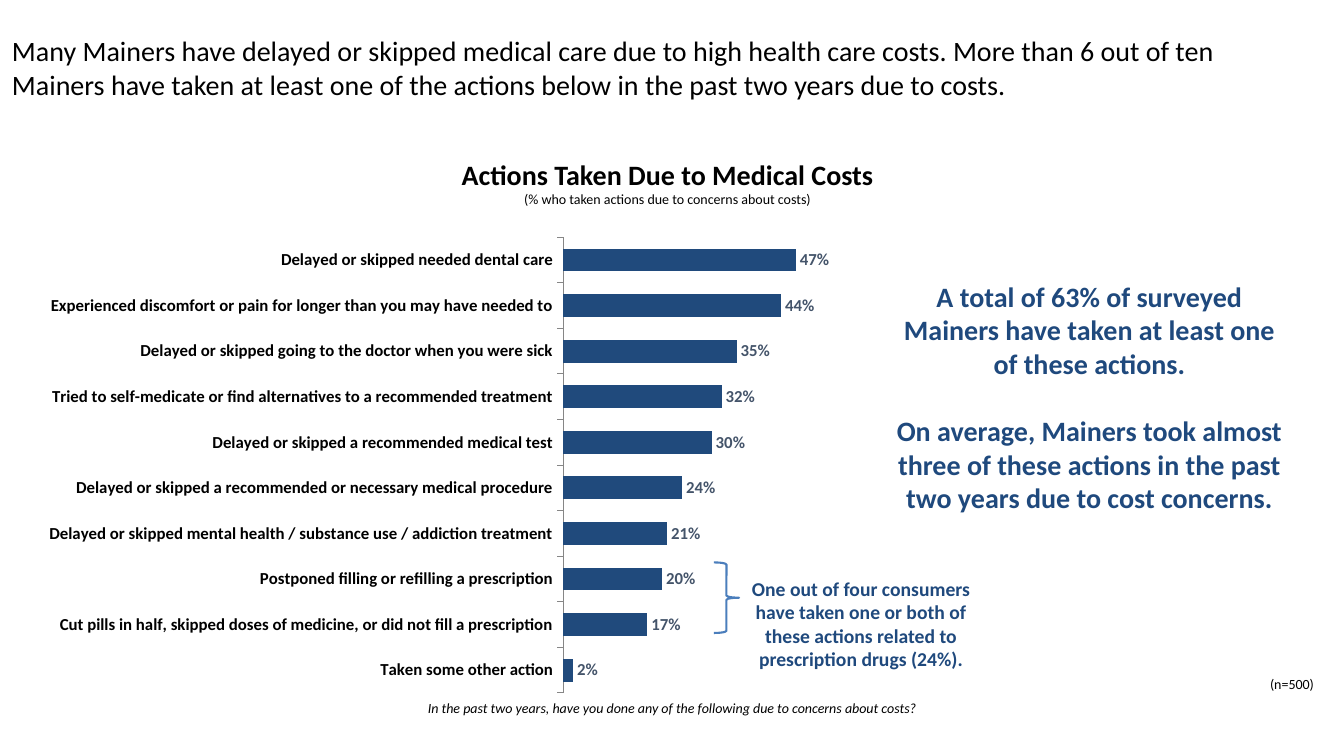
from lxml import etree
from pptx import Presentation
from pptx import util as u
from pptx.chart import data as chart_data
from pptx.dml.color import RGBColor
from pptx.enum import chart as charts, shapes, text
from pptx.oxml import ns

ACTIONS = {
    "Delayed or skipped needed dental care": 0.47,
    "Experienced discomfort or pain for longer than you may have needed to": 0.44,
    "Delayed or skipped going to the doctor when you were sick": 0.35,
    "Tried to self-medicate or find alternatives to a recommended treatment": 0.32,
    "Delayed or skipped a recommended medical test": 0.30,
    "Delayed or skipped a recommended or necessary medical procedure": 0.24,
    "Delayed or skipped mental health / substance use / addiction treatment": 0.21,
    "Postponed filling or refilling a prescription": 0.20,
    "Cut pills in half, skipped doses of medicine, or did not fill a prescription": 0.17,
    "Taken some other action": 0.02,
}
BLACK, NAVY, BAR, SLATE, BLUE, GRAY = "000000", "1F497D", "204A7C", "44546A", "4B7EBC", "868686"
PX = 9144


def color(value):
    return RGBColor.from_string(value)


def style_font(font, size=10, ink=BLACK, bold=False, italic=False):
    font.name, font.size = "Calibri", u.Pt(size)
    font.bold, font.italic = bold, italic
    font.color.rgb = color(ink)


def add_text(para, words, align="CENTER", line=None, before=0, after=0, **style):
    para.alignment = getattr(text.PP_ALIGN, align)
    para.space_before, para.space_after = u.Pt(before), u.Pt(after)
    if line:
        para.line_spacing = line
    span = para.add_run()
    span.text = words
    style_font(span.font, **style)


class SlideBuilder:
    """Hold the deck and its current page and place elements in px."""

    def __init__(self, width, height):
        self.deck = Presentation()
        self.deck.slide_width, self.deck.slide_height = self.scale(width, height)
        self.page = self.deck.slides.add_slide(self.deck.slide_layouts[6])

    def scale(self, *lengths):
        return [u.Emu(length * PX) for length in lengths]

    def text_box(self, place, *paragraphs, anchor="TOP"):
        frame = self.page.shapes.add_textbox(*self.scale(*place)).text_frame
        frame.word_wrap = True
        frame.vertical_anchor = getattr(text.MSO_ANCHOR, anchor)
        for index, (words, style) in enumerate(paragraphs):
            para = frame.add_paragraph() if index else frame.paragraphs[0]
            add_text(para, words, **style)

    def brace(self, place, ink):
        brace = self.page.shapes.add_shape(shapes.MSO_SHAPE.RIGHT_BRACE, *self.scale(*place))
        brace.shadow.inherit = False
        brace.fill.background()
        brace.line.color.rgb = color(ink)
        brace.line.width = u.Pt(1.5)

    def bar_chart(self, place, values, plot_area):
        data = chart_data.CategoryChartData(number_format="0%")
        data.categories = list(values)
        data.add_series("Series 1", list(values.values()))
        chart = self.page.shapes.add_chart(
            charts.XL_CHART_TYPE.BAR_CLUSTERED, *self.scale(*place), data).chart
        chart.has_title = chart.has_legend = False
        style_font(chart.font)
        category, value = chart.category_axis, chart.value_axis
        category.reverse_order = True
        category.major_tick_mark = charts.XL_TICK_MARK.OUTSIDE
        category.format.line.color.rgb = color(GRAY)
        style_font(category.tick_labels.font, size=12, bold=True)
        value.minimum_scale, value.maximum_scale = 0, 1
        value.has_major_gridlines = value.visible = False
        plot = chart.plots[0]
        plot.gap_width, plot.vary_by_categories = 100, False
        plot.series[0].format.fill.solid()
        plot.series[0].format.fill.fore_color.rgb = color(BAR)
        plot.has_data_labels = True
        labels = plot.data_labels
        labels.show_value = True
        labels.number_format, labels.number_format_is_linked = "0%", False
        labels.position = charts.XL_LABEL_POSITION.OUTSIDE_END
        style_font(labels.font, size=12, ink=SLATE, bold=True)
        self.set_plot_area(chart, plot_area)

    def set_plot_area(self, chart, fractions):
        area = chart.plots[0]._element.getparent()
        for old in area.findall(ns.qn("c:layout")):
            area.remove(old)
        layout = etree.Element(ns.qn("c:layout"))
        area.insert(0, layout)
        manual = etree.SubElement(layout, ns.qn("c:manualLayout"))
        settings = {"layoutTarget": "inner", "xMode": "edge", "yMode": "edge",
                    **dict(zip("xywh", fractions))}
        for name, setting in settings.items():
            etree.SubElement(manual, ns.qn(f"c:{name}"), val=str(setting))


def main():
    slide = SlideBuilder(1333, 750)
    callout = dict(size=20, ink=NAVY, bold=True)
    slide.text_box((2, 4, 1231, 125), (
        "Many Mainers have delayed or skipped medical care due to high health care costs. "
        "More than 6 out of ten Mainers have taken at least one of the actions below in the "
        "past two years due to costs.",
        dict(size=20, align="LEFT", line=u.Pt(24), after=3)), anchor="MIDDLE")
    slide.text_box((233, 689, 867, 27), (
        "In the past two years, have you done any of the following due to concerns about costs?",
        dict(italic=True)))
    slide.text_box((975, 665, 338, 27), ("(n=500)", dict(align="RIGHT")))
    slide.text_box(
        (216, 156, 892, 56),
        ("Actions Taken Due to Medical Costs", dict(size=20, bold=True, line=0.85)),
        ("(% who taken actions due to concerns about costs)", {}))
    slide.text_box(
        (874, 272, 413, 246),
        ("A total of 63% of surveyed Mainers have taken at least one of these actions.", callout),
        ("On average, Mainers took almost three of these actions in the past two years "
         "due to cost concerns.", dict(callout, before=24)))
    slide.text_box((733, 567, 242, 104), (
        "One out of four consumers have taken one or both of these actions related to "
        "prescription drugs (24%).", dict(callout, size=14)))
    slide.brace((708, 558, 25, 70), BLUE)
    slide.bar_chart((-42, 163, 1092, 532), ACTIONS, (0.55, 0.136, 0.45, 0.85))
    slide.deck.save("out.pptx")


if __name__ == "__main__":
    main()
